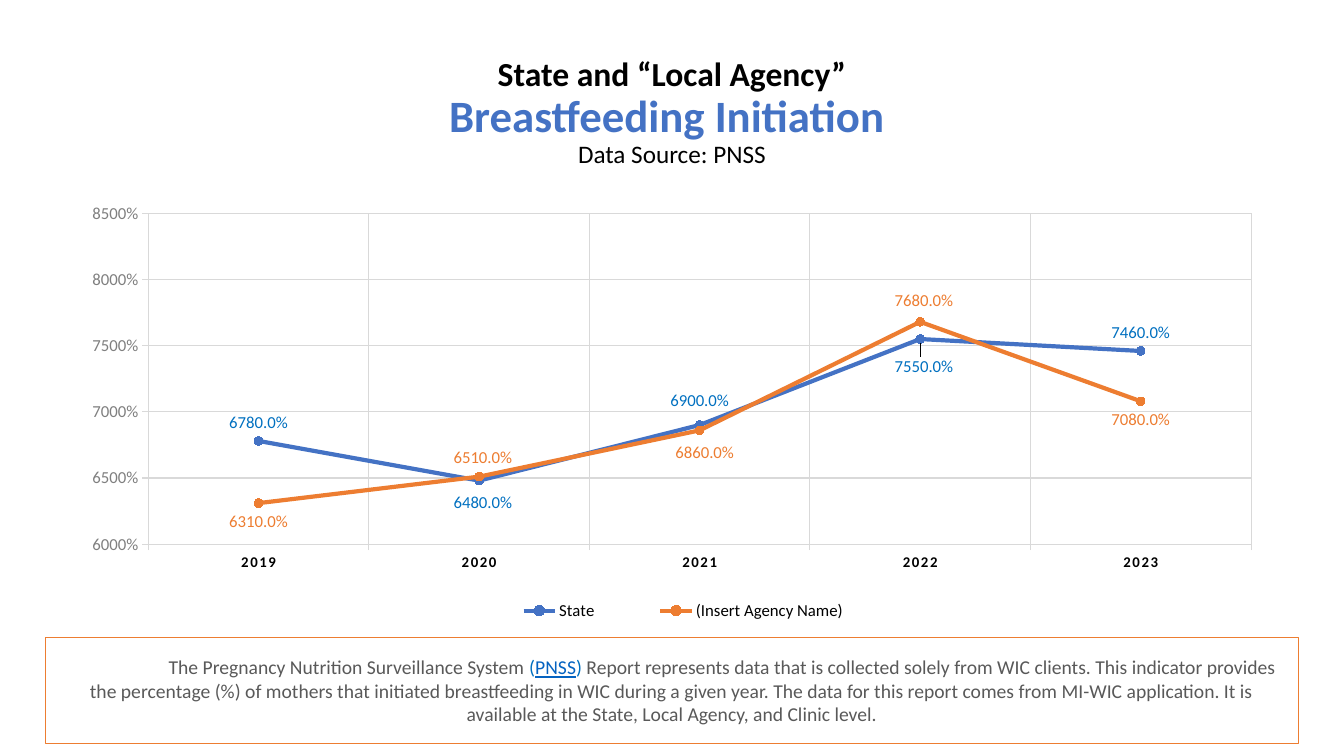
"""Build the breastfeeding initiation slide on a grid of 160 by 90 cells."""
import copy
import dataclasses
import typing

import lxml.etree
import pptx
import pptx.chart.data
import pptx.dml.color
import pptx.enum.chart
import pptx.enum.shapes
import pptx.enum.text
import pptx.oxml.ns
import pptx.util

RGB = pptx.dml.color.RGBColor.from_string
ABOVE = pptx.enum.chart.XL_LABEL_POSITION.ABOVE
BELOW = pptx.enum.chart.XL_LABEL_POSITION.BELOW
CELL = pptx.util.Inches(1) / 12


@dataclasses.dataclass(frozen=True)
class Theme:
    font: str = "Calibri"
    black: str = "000000"
    blue: str = "4472C4"
    orange: str = "ED7D31"
    label_blue: str = "0070C0"
    link: str = "0563C1"
    text: str = "595959"
    axis: str = "7F7F7F"
    grid: str = "D9D9D9"
    heading: float = 32
    kicker: float = 24
    source: float = 18
    note: float = 14
    chart: float = 12
    year: float = 10.6


class Box(typing.NamedTuple):
    x: float
    y: float
    w: float
    h: float

    def emu(self) -> list[int]:
        return [round(v * CELL) for v in self]

    def share_of(self, outer: "Box") -> dict[str, float]:
        return {"x": (self.x - outer.x) / outer.w, "y": (self.y - outer.y) / outer.h,
                "w": self.w / outer.w, "h": self.h / outer.h}


class Run(typing.NamedTuple):
    text: str
    size: float
    color: str
    bold: bool = False
    underline: bool = False


class Line(typing.NamedTuple):
    name: str
    values: tuple[float, ...]
    color: str
    label_color: str
    position: typing.Any
    moved: dict[int, tuple[typing.Any, float, float]]


T = Theme()
TITLE = Box(11, 4.8, 138, 17.4)
CHART = Box(11, 19.8, 138, 57.4)
PLOT = Box(17.4, 25.4, 131.6, 39.4)
LEGEND = Box(55, 70.9, 52.5, 3.6)
NOTE = Box(5.4, 75.9, 149.2, 12.6)

YEARS = ("2019", "2020", "2021", "2022", "2023")
LINES = (
    Line("State", (67.8, 64.8, 69, 75.5, 74.6), T.blue, T.label_blue, ABOVE,
         {1: (BELOW, 0.45, 0.5), 2: (ABOVE, 0, -0.7), 3: (BELOW, 0.45, 1.1)}),
    Line("(Insert Agency Name)", (63.1, 65.1, 68.6, 76.8, 70.8), T.orange, T.orange, BELOW,
         {1: (ABOVE, 0.45, -0.1), 2: (BELOW, 0.6, 0.5), 3: (ABOVE, 0.45, -0.4)}),
)
TITLE_RUNS = (
    Run("State and “Local Agency”", T.kicker, T.black, True),
    Run("Breastfeeding Initiation ", T.heading, T.blue, True),
    Run("Data Source: PNSS", T.source, T.black),
)
NOTE_RUNS = (
    Run("\tThe Pregnancy Nutrition Surveillance System ", T.note, T.text),
    Run("(", T.note, T.label_blue),
    Run("PNSS", T.note, T.link, underline=True),
    Run(") ", T.note, T.label_blue),
    Run("Report represents data that is collected solely from WIC clients. This indicator "
        "provides the percentage (%) of mothers that initiated breastfeeding in WIC during "
        "a given year. The data for this report comes from MI-WIC application. It is "
        "available at the State, Local Agency, and Clinic level.", T.note, T.text),
)


def apply(obj: typing.Any, **values: typing.Any) -> None:
    for name, value in values.items():
        setattr(obj, name, value)


def style_font(font: typing.Any, size: float, color: str, **values: typing.Any) -> None:
    apply(font, name=T.font, size=pptx.util.Pt(size), **values)
    font.color.rgb = RGB(color)


def style_line(line: typing.Any, color: str, width: float = 0.75) -> None:
    line.color.rgb = RGB(color)
    line.width = pptx.util.Pt(width)


def write_runs(tf: typing.Any, runs: tuple[Run, ...], breaks: bool = False) -> typing.Any:
    apply(tf, word_wrap=True, auto_size=pptx.enum.text.MSO_AUTO_SIZE.NONE,
          vertical_anchor=pptx.enum.text.MSO_ANCHOR.MIDDLE)
    p = tf.paragraphs[0]
    p.alignment = pptx.enum.text.PP_ALIGN.CENTER
    for i, run in enumerate(runs):
        r = p.add_run()
        r.text = run.text
        style_font(r.font, run.size, run.color, bold=run.bold, underline=run.underline)
        if breaks and i < len(runs) - 1:
            p.add_line_break()
            p._p[-1].append(copy.deepcopy(r._r.rPr))
    return p


def set_layout(parent: typing.Any, index: int, values: dict[str, typing.Any]) -> None:
    qn = pptx.oxml.ns.qn
    for old in parent.findall(qn("c:layout")):
        parent.remove(old)
    layout = lxml.etree.Element(qn("c:layout"))
    manual = lxml.etree.SubElement(layout, qn("c:manualLayout"))
    for name, value in values.items():
        lxml.etree.SubElement(manual, qn(f"c:{name}")).set("val", str(value))
    parent.insert(index, layout)


def style_series(series: typing.Any, line: Line) -> None:
    series.smooth = False
    style_line(series.format.line, line.color, 3)
    apply(series.marker, style=pptx.enum.chart.XL_MARKER_STYLE.CIRCLE, size=6)
    series.marker.format.fill.solid()
    series.marker.format.fill.fore_color.rgb = RGB(line.color)
    style_line(series.marker.format.line, line.color)
    labels = series.data_labels
    apply(labels, show_value=True, number_format="0.0%", number_format_is_linked=False,
          position=line.position)
    style_font(labels.font, T.chart, line.label_color)
    for i, (position, dx, dy) in line.moved.items():
        label = series.points[i].data_label
        style_font(label.font, T.chart, line.label_color)
        label.position = position
        dlbl = labels._element.xpath(f"c:dLbl[c:idx/@val='{i}']")[0]
        set_layout(dlbl, 1, {"x": dx / CHART.w, "y": dy / CHART.h})


def add_line_chart(s: typing.Any) -> None:
    data = pptx.chart.data.CategoryChartData(number_format="0.0%")
    data.categories = YEARS
    for line in LINES:
        data.add_series(line.name, line.values)
    chart = s.shapes.add_chart(
        pptx.enum.chart.XL_CHART_TYPE.LINE_MARKERS, *CHART.emu(), data).chart
    apply(chart, has_title=False, has_legend=True)
    style_font(chart.font, T.chart, T.axis)
    chart.plots[0].vary_by_categories = False
    for series, line in zip(chart.plots[0].series, LINES):
        style_series(series, line)

    years, rates = chart.category_axis, chart.value_axis
    for axis in (years, rates):
        apply(axis, has_major_gridlines=True,
              major_tick_mark=pptx.enum.chart.XL_TICK_MARK.OUTSIDE)
        style_line(axis.format.line, T.grid)
        style_line(axis.major_gridlines.format.line, T.grid)
    apply(rates, minimum_scale=60, maximum_scale=85, major_unit=5)
    apply(rates.tick_labels, number_format="0%", number_format_is_linked=False)
    style_font(rates.tick_labels.font, T.chart, T.axis)
    style_font(years.tick_labels.font, T.year, T.black, bold=True)
    years._element.xpath(".//a:defRPr")[0].set("spc", "120")

    legend = chart.legend
    apply(legend, position=pptx.enum.chart.XL_LEGEND_POSITION.BOTTOM, include_in_layout=False)
    style_font(legend.font, T.chart, T.black)
    edges = {"xMode": "edge", "yMode": "edge"}
    set_layout(legend._element, 1, {**edges, **LEGEND.share_of(CHART)})
    set_layout(chart._chartSpace.chart.plotArea, 0,
               {"layoutTarget": "inner", **edges, **PLOT.share_of(CHART)})


def main() -> None:
    prs = pptx.Presentation()
    apply(prs, slide_width=round(160 * CELL), slide_height=round(90 * CELL))
    s = prs.slides.add_slide(prs.slide_layouts[5])
    add_line_chart(s)
    title = s.shapes.title
    apply(title, **dict(zip(("left", "top", "width", "height"), TITLE.emu())))
    write_runs(title.text_frame, TITLE_RUNS, breaks=True).line_spacing = 0.9
    sp = s.shapes.add_shape(pptx.enum.shapes.MSO_SHAPE.RECTANGLE, *NOTE.emu())
    sp.shadow.inherit = False
    sp.fill.background()
    style_line(sp.line, T.orange)
    p = write_runs(sp.text_frame, NOTE_RUNS)
    p._p.get_or_add_pPr().set("defTabSz", str(pptx.util.Inches(1)))
    prs.save("out.pptx")


if __name__ == "__main__":
    main()
